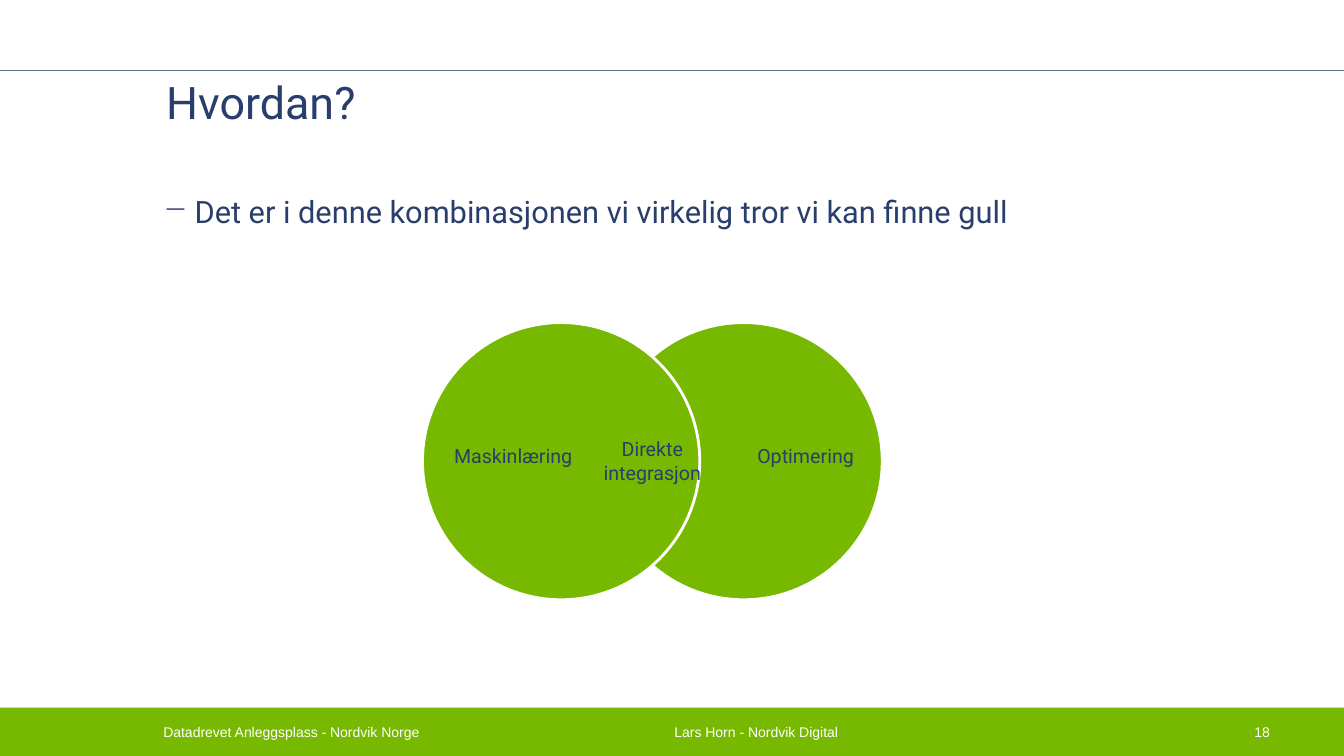
from lxml import etree
from pptx import Presentation
from pptx.dml.color import RGBColor
from pptx.enum.shapes import MSO_CONNECTOR, MSO_SHAPE
from pptx.enum.text import MSO_ANCHOR, PP_ALIGN
from pptx.oxml.ns import qn
from pptx.util import Inches, Pt

RECTANGLE, OVAL = MSO_SHAPE.RECTANGLE, MSO_SHAPE.OVAL
STRAIGHT = MSO_CONNECTOR.STRAIGHT
TOP, MIDDLE = MSO_ANCHOR.TOP, MSO_ANCHOR.MIDDLE
LEFT, CENTER, RIGHT = PP_ALIGN.LEFT, PP_ALIGN.CENTER, PP_ALIGN.RIGHT

GREEN, WHITE, NAVY, INK = "77B800", "FFFFFF", "002551", "293E6B"
WIDTH, HEIGHT = 13.33, 7.5
HEADER_HEIGHT = 0.7
FOOTER_TOP = 7.02
CIRCLE_TOP, CIRCLE_SIZE = 3.2, 2.75


def color(value):
    return RGBColor.from_string(value)


class SlideBuilder:
    """Holds the text style and the slide being built."""

    font_name = "Roboto"
    font_color = INK

    def __init__(self, slide):
        self.slide = slide

    def shape(self, kind, left, top, width, height, fill, outline=None):
        shape = self.slide.shapes.add_shape(
            kind, Inches(left), Inches(top), Inches(width), Inches(height))
        shape.shadow.inherit = False
        shape.fill.solid()
        shape.fill.fore_color.rgb = color(fill)
        if outline:
            shape.line.color.rgb = color(outline)
            shape.line.width = Pt(2)
        else:
            shape.line.fill.background()
        return shape

    def rule(self, top):
        line = self.slide.shapes.add_connector(
            STRAIGHT, 0, Inches(top), Inches(WIDTH), Inches(top))
        line.line.color.rgb = color(NAVY)
        line.line.width = Pt(1)
        etree.SubElement(line._element.spPr, qn("a:effectLst"))

    def text(self, content, left, top, width, height, size, align=LEFT,
             anchor=TOP, inset=(0.05, 0.05), bullet=None, spacing=None):
        box = self.slide.shapes.add_textbox(
            Inches(left), Inches(top), Inches(width), Inches(height))
        frame = box.text_frame
        frame.word_wrap = True
        frame.vertical_anchor = anchor
        frame.margin_left = frame.margin_right = Inches(inset[0])
        frame.margin_top = frame.margin_bottom = Inches(inset[1])
        frame.text = content
        paragraph = frame.paragraphs[0]
        paragraph.alignment = align
        if spacing:
            paragraph.line_spacing = spacing
        if bullet:
            properties = paragraph._p.get_or_add_pPr()
            properties.set("marL", str(Inches(0.31)))
            properties.set("indent", str(-Inches(0.31)))
            etree.SubElement(properties, qn("a:buChar"), char=bullet)
        font = paragraph.runs[0].font
        font.name = self.font_name
        font.size = Pt(size)
        font.color.rgb = color(self.font_color)

    def footer(self, content, left, width, inset=(0, 0)):
        self.font_name, self.font_color = "Arial", WHITE
        self.text(content, left, 7.16, width, 0.2, 10,
                  anchor=MIDDLE, inset=inset)

    def circle(self, left):
        self.shape(OVAL, left, CIRCLE_TOP, CIRCLE_SIZE, CIRCLE_SIZE,
                   GREEN, WHITE)


def main():
    presentation = Presentation()
    presentation.slide_width = Inches(WIDTH)
    presentation.slide_height = Inches(HEIGHT)
    slide = presentation.slides.add_slide(presentation.slide_layouts[6])
    builder = SlideBuilder(slide)

    # Header and footer bands
    builder.shape(RECTANGLE, 0, FOOTER_TOP, WIDTH, HEIGHT - FOOTER_TOP, GREEN)
    builder.rule(HEADER_HEIGHT)
    builder.shape(RECTANGLE, 0, 0, WIDTH, HEADER_HEIGHT, WHITE)

    # Title and message
    builder.text("Hvordan?", 1.55, 0.75, 7.21, 0.59, 32,
                 inset=(0.1, 0.05), spacing=0.9)
    builder.text(
        "Det er i denne kombinasjonen vi virkelig tror vi kan finne gull",
        1.57, 1.86, 11.55, 4.87, 22, bullet="−")

    # Overlapping circles, the left one in front
    builder.circle(6)
    builder.text("Optimering", 7.34, 4.36, 1.18, 0.34, 14, RIGHT)
    builder.circle(4.19)
    builder.text("Maskinlæring", 4.34, 4.36, 1.5, 0.34, 14, CENTER)
    builder.text("Direkte integrasjon", 5.88, 4.29, 1.18, 0.57, 14, CENTER)

    # Footer texts
    builder.footer("Datadrevet Anleggsplass - Nordvik Norge", 1.62, 4.86)
    builder.footer("Lars Horn - Nordvik Digital", 6.59, 5.75, (0.1, 0.05))
    builder.footer("18", 12.44, 0.68)

    presentation.save("out.pptx")


if __name__ == "__main__":
    main()
